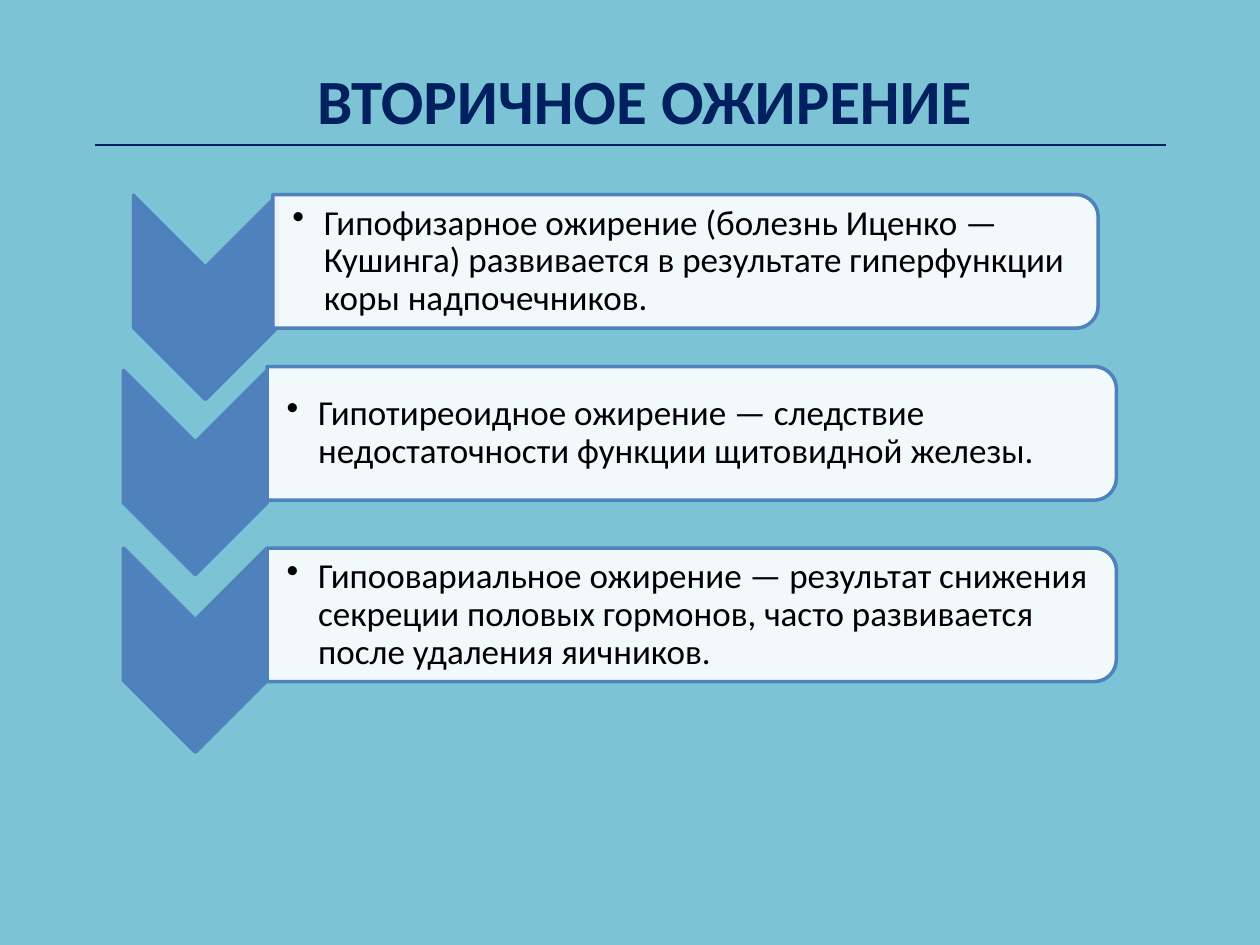
from dataclasses import dataclass

from lxml.etree import SubElement
from pptx import Presentation
from pptx.dml.color import RGBColor
from pptx.enum.shapes import MSO_CONNECTOR, MSO_SHAPE
from pptx.enum.text import MSO_ANCHOR, PP_ALIGN
from pptx.oxml.ns import qn
from pptx.util import Pt

SKY = RGBColor(0x7C, 0xC3, 0xD6)
NAVY = RGBColor(0x00, 0x20, 0x60)
BLUE = RGBColor(0x4F, 0x81, 0xBD)
WHITE = RGBColor(0xFF, 0xFF, 0xFF)
BLACK = RGBColor(0x00, 0x00, 0x00)

FONT = "Calibri"
CHEVRON_WIDTH, CHEVRON_HEIGHT = 82.08, 116.64
PANEL_HEIGHT, TEXT_HEIGHT = 76.32, 68.4
TEXT_INSET = 3.96


@dataclass(frozen=True)
class ObesityType:
    chevron_left: float
    chevron_top: float
    panel_left: float
    panel_top: float
    panel_width: float
    description: str


OBESITY_TYPES = [
    ObesityType(76.32, 111.6, 155.88, 111.24, 471.6,
                "Гипофизарное ожирение (болезнь Иценко — Кушинга) развивается "
                "в результате гиперфункции коры надпочечников."),
    ObesityType(70.56, 211.68, 152.64, 209.52, 485.28,
                "Гипотиреоидное ожирение — следствие недостаточности функции "
                "щитовидной железы."),
    ObesityType(70.56, 313.2, 152.64, 313.2, 485.28,
                "Гипоовариальное ожирение — результат снижения секреции половых "
                "гормонов, часто развивается после удаления яичников."),
]


def add_run(paragraph, text: str, size: float, color: RGBColor, bold: bool = False) -> None:
    run = paragraph.add_run()
    run.text = text
    run.font.name = FONT
    run.font.size = Pt(size)
    run.font.bold = bold
    run.font.color.rgb = color


def add_turned_shape(shapes, preset: MSO_SHAPE, left: float, top: float,
                     width: float, height: float, fill: RGBColor):
    shift = (width - height) / 2
    shape = shapes.add_shape(preset, Pt(left + shift), Pt(top - shift), Pt(height), Pt(width))
    shape.rotation = 90
    shape.shadow.inherit = False
    shape.fill.solid()
    shape.fill.fore_color.rgb = fill
    shape.line.color.rgb = BLUE
    shape.line.width = Pt(2)
    return shape


def set_opacity(shape, percent: int) -> None:
    color = shape.fill._xPr.find(qn("a:solidFill"))[0]
    SubElement(color, qn("a:alpha"), val=str(percent * 1000))


def add_bullet(paragraph) -> None:
    properties = paragraph._p.get_or_add_pPr()
    properties.set("marL", str(Pt(18)))
    properties.set("indent", str(Pt(-18)))
    SubElement(properties, qn("a:buChar"), char="•")


def add_description(shapes, item: ObesityType) -> None:
    description = shapes.add_textbox(
        Pt(item.panel_left), Pt(item.panel_top + TEXT_INSET),
        Pt(item.panel_width - TEXT_INSET), Pt(TEXT_HEIGHT))
    frame = description.text_frame
    frame.word_wrap = True
    frame.vertical_anchor = MSO_ANCHOR.MIDDLE
    frame.margin_left = Pt(11.2)
    frame.margin_top = frame.margin_right = frame.margin_bottom = Pt(1)
    paragraph = frame.paragraphs[0]
    paragraph.level = 1
    paragraph.line_spacing = 0.9
    paragraph.space_after = Pt(3)
    add_bullet(paragraph)
    add_run(paragraph, item.description, 20, BLACK)


def add_obesity_type(shapes, item: ObesityType) -> None:
    add_turned_shape(shapes, MSO_SHAPE.CHEVRON, item.chevron_left, item.chevron_top,
                     CHEVRON_WIDTH, CHEVRON_HEIGHT, BLUE)
    panel = add_turned_shape(shapes, MSO_SHAPE.ROUND_2_SAME_RECTANGLE, item.panel_left,
                             item.panel_top, item.panel_width, PANEL_HEIGHT, WHITE)
    set_opacity(panel, 90)
    add_description(shapes, item)


def add_heading(shapes) -> None:
    heading = shapes.add_textbox(Pt(127.44), Pt(31.68), Pt(481.68), Pt(51.12))
    heading.text_frame.word_wrap = True
    paragraph = heading.text_frame.paragraphs[0]
    paragraph.alignment = PP_ALIGN.CENTER
    add_run(paragraph, "ВТОРИЧНОЕ ОЖИРЕНИЕ", 36, NAVY, bold=True)

    underline = shapes.add_connector(MSO_CONNECTOR.STRAIGHT, Pt(54), Pt(82.8), Pt(666), Pt(82.8))
    underline.line.color.rgb = NAVY
    underline.line.width = Pt(0.75)
    SubElement(underline._element.spPr, qn("a:effectLst"))


def main() -> None:
    presentation = Presentation()
    presentation.slide_width, presentation.slide_height = Pt(720), Pt(540)
    slide = presentation.slides.add_slide(presentation.slide_layouts[6])
    slide.background.fill.solid()
    slide.background.fill.fore_color.rgb = SKY
    add_heading(slide.shapes)
    chevron_list = slide.shapes.add_group_shape()
    for item in OBESITY_TYPES:
        add_obesity_type(chevron_list.shapes, item)
    presentation.save("out.pptx")


if __name__ == "__main__":
    main()
